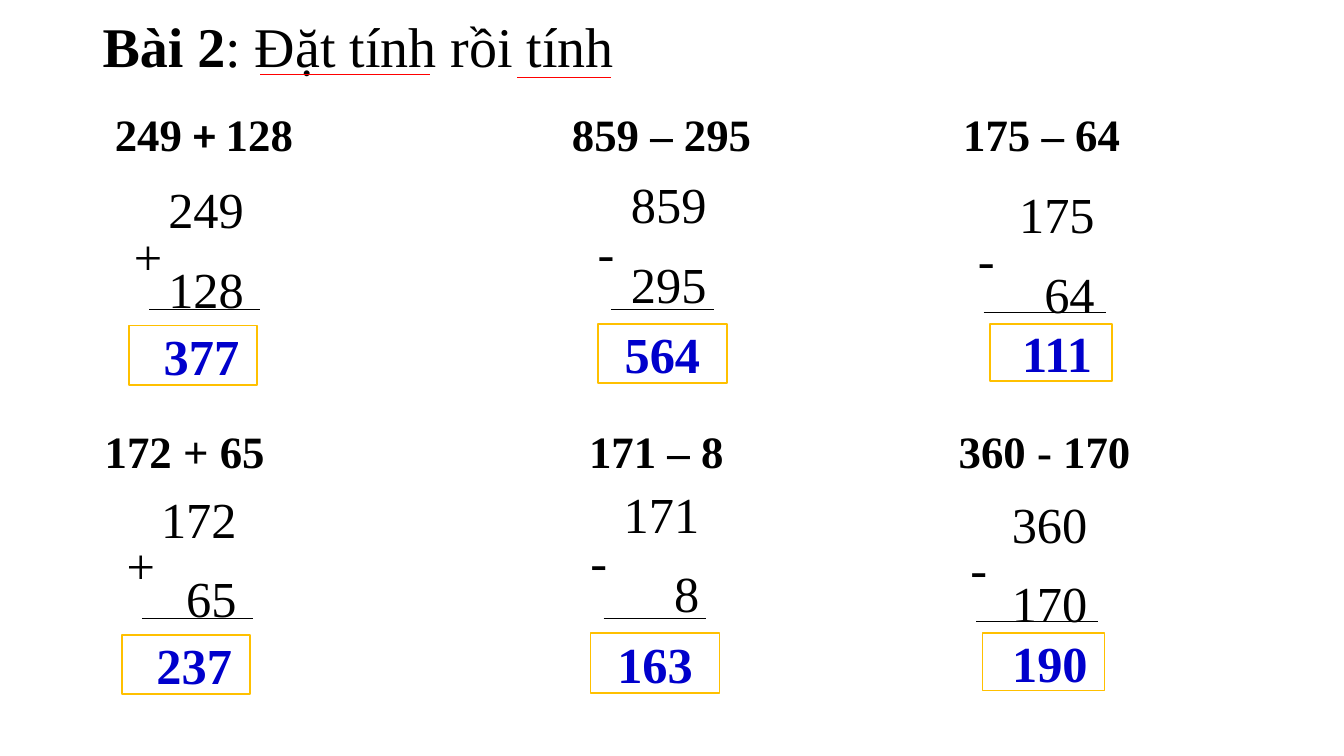
from dataclasses import dataclass

from lxml import etree
from pptx import Presentation
from pptx.dml.color import RGBColor
from pptx.enum.shapes import MSO_CONNECTOR, MSO_SHAPE
from pptx.enum.text import MSO_ANCHOR, MSO_AUTO_SIZE, PP_ALIGN
from pptx.oxml.ns import qn
from pptx.util import Pt

LEFT, CENTER, RIGHT = PP_ALIGN.LEFT, PP_ALIGN.CENTER, PP_ALIGN.RIGHT
MIDDLE = MSO_ANCHOR.MIDDLE
GROW = MSO_AUTO_SIZE.SHAPE_TO_FIT_TEXT
STRAIGHT = MSO_CONNECTOR.STRAIGHT
RECTANGLE = MSO_SHAPE.RECTANGLE


@dataclass(frozen=True)
class Theme:
    font: str = "Times New Roman"
    plus_font: str = "Calibri"
    ink: RGBColor = RGBColor(0, 0, 0)
    paper: RGBColor = RGBColor(0xFF, 0xFF, 0xFF)
    result: RGBColor = RGBColor(0, 0, 0xCC)
    frame: RGBColor = RGBColor(0xFF, 0xC0, 0)
    underline: RGBColor = RGBColor(0xFF, 0, 0)
    title_size: int = 40
    heading_size: int = 32
    sum_size: int = 36
    thin: float = 0.5
    frame_width: float = 1.25


class Worksheet:
    def __init__(self, slide, theme):
        self.slide = slide
        self.theme = theme

    def style(self, paragraph, size, color, bold=None):
        font = paragraph.font
        font.name, font.size, font.bold = self.theme.font, Pt(size), bold
        font.color.rgb = color

    def title(self, box, label, task):
        frame = self.slide.shapes.add_textbox(*map(Pt, box)).text_frame
        frame.word_wrap, frame.vertical_anchor = True, MIDDLE
        paragraph = frame.paragraphs[0]
        paragraph.line_spacing = 0.9
        self.style(paragraph, self.theme.title_size, self.theme.ink)
        for text, bold in ((label, True), (task, False)):
            run = paragraph.add_run()
            run.text, run.font.bold = text, bold

    def heading(self, box, pieces, stops):
        """One row of expressions; pieces are (text, font) pairs."""
        frame = self.slide.shapes.add_textbox(*map(Pt, box)).text_frame
        frame.word_wrap, frame.auto_size = True, GROW
        paragraph = frame.paragraphs[0]
        paragraph.line_spacing = 1.5
        paragraph.space_before = paragraph.space_after = Pt(5.1)
        self.style(paragraph, self.theme.heading_size, self.theme.ink, True)
        for text, font in pieces:
            run = paragraph.add_run()
            run.text, run.font.name = text, font
        defaults = paragraph._p.pPr.find(qn("a:defRPr"))
        tabs = etree.Element(qn("a:tabLst"))
        defaults.addprevious(tabs)
        for stop in stops:
            etree.SubElement(tabs, qn("a:tab"), pos=str(Pt(stop)), algn="l")

    def numbers(self, shapes, box, lines, align=LEFT, right_inset=5):
        frame = shapes.add_textbox(*map(Pt, box)).text_frame
        frame.word_wrap = True
        frame.margin_left, frame.margin_right = Pt(5), Pt(right_inset)
        frame.margin_top = frame.margin_bottom = Pt(2.9)
        frame.text = "\n".join(lines)
        for paragraph in frame.paragraphs:
            paragraph.alignment = align
            paragraph.line_spacing, paragraph.space_after = 1.15, Pt(7.2)
            self.style(paragraph, self.theme.sum_size, self.theme.ink)

    def rule(self, shapes, x1, x2, y, color):
        line = shapes.add_connector(STRAIGHT, Pt(x1), Pt(y), Pt(x2), Pt(y))
        line.line.color.rgb, line.line.width = color, Pt(self.theme.thin)
        etree.SubElement(line._element.spPr, qn("a:effectLst"))

    def answer(self, box, text, indent):
        shape = self.slide.shapes.add_shape(RECTANGLE, *map(Pt, box))
        shape.shadow.inherit = False
        shape.fill.solid()
        shape.fill.fore_color.rgb = self.theme.paper
        shape.line.color.rgb = self.theme.frame
        shape.line.width = Pt(self.theme.frame_width)
        frame = shape.text_frame
        frame.vertical_anchor, frame.margin_left = MIDDLE, Pt(7.2 + indent)
        frame.text = text
        frame.paragraphs[0].alignment = CENTER
        self.style(frame.paragraphs[0], self.theme.sum_size, self.theme.result, True)

    def column_sum(self, column, dx, dy, sign, operands, result):
        """A worked sum: operands, sign and rule grouped, then its boxed result."""
        def moved(box):
            return box[0] + dx, box[1] + dy, box[2], box[3]

        shapes = self.slide.shapes.add_group_shape().shapes
        # Three digits, each half the type size wide, follow the left inset
        right_inset = column.operands[2] - 5 - 1.5 * self.theme.sum_size
        self.numbers(shapes, moved(column.operands), operands, RIGHT, right_inset)
        self.numbers(shapes, moved(column.sign), [sign])
        x1, x2, y = column.rule
        self.rule(shapes, x1 + dx, x2 + dx, y + dy, self.theme.ink)
        self.answer(moved(column.answer), result, column.indent)


@dataclass(frozen=True)
class Column:
    operands: tuple
    sign: tuple
    rule: tuple
    answer: tuple
    indent: float


COLUMNS = (
    Column((115.2, 118.1, 98.6, 81.4), (90.7, 151.2, 56.9, 25.9),
           (106.6, 185.8, 221), (92.2, 232.4, 91.4, 42.5), 12),
    Column((445.7, 114.5, 92.9, 72), (421.9, 148.3, 53.3, 20.9),
           (436.3, 509.8, 221), (427, 231.3, 92.2, 42.5), 0),
    Column((722.9, 121.7, 85.7, 66.2), (693.4, 153.4, 49, 19.4),
           (702.7, 789.8, 223), (707, 231.3, 87.1, 41), 9),
)

# Each row: offset, then sign, operands and result per column
ROWS = (
    (0, 0, (("+", ("249", "128"), "377"),
            ("-", ("859", "295"), "564"),
            ("-", ("175", "64"), "111"))),
    (-5.2, 221, (("+", ("172", "65"), "237"),
                 ("-", ("171", "8"), "163"),
                 ("-", ("360", "170"), "190"))),
)


def main():
    deck = Presentation()
    deck.slide_width, deck.slide_height = Pt(960), Pt(540)
    theme = Theme()
    sheet = Worksheet(deck.slides.add_slide(deck.slide_layouts[6]), theme)

    # Title with its two underlined words
    sheet.title((66.2, 16.6, 759.6, 36.7), "Bài 2", ": Đặt tính rồi tính")
    for x1, x2, y in ((185.8, 307.4, 53.3), (369.4, 436.3, 55.6)):
        sheet.rule(sheet.slide.shapes, x1, x2, y, theme.underline)

    # Expressions to work out
    sheet.heading((74.9, 53.3, 812.9, 58.3),
                  (("249 ", theme.font), ("+ ", theme.plus_font),
                   ("128\t859 – 295\t175 – 64", theme.font)), (326.5, 606))
    sheet.heading((67.7, 280.1, 812.9, 58.3),
                  (("172 + 65\t171 – 8\t360 - 170", theme.font),), (346, 610))

    # Worked sums
    for dx, dy, sums in ROWS:
        for column, (sign, operands, result) in zip(COLUMNS, sums):
            sheet.column_sum(column, dx, dy, sign, operands, result)

    deck.save("out.pptx")


if __name__ == "__main__":
    main()
